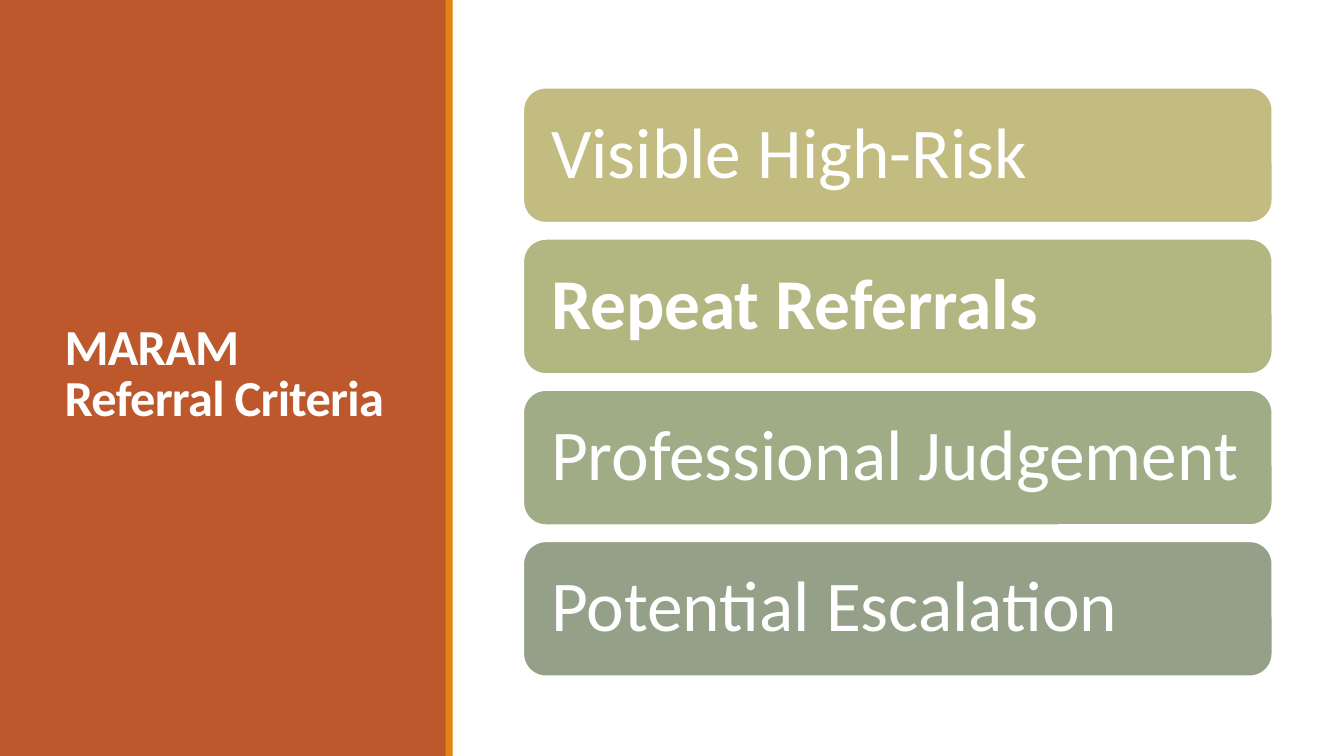
from pptx import Presentation
from pptx.dml.color import RGBColor
from pptx.enum.shapes import MSO_SHAPE
from pptx.enum.text import MSO_ANCHOR, MSO_AUTO_SIZE, PP_ALIGN
from pptx.util import Inches, Pt

FONT = "Calibri"
WHITE = "FFFFFF"
CRITERIA = [
    ("Visible High-Risk", "C2BC80", False),
    ("Repeat Referrals", "B2B782", True),
    ("Professional Judgement", "A0AC85", False),
    ("Potential Escalation", "94A088", False),
]
CARD_TOP, CARD_PITCH = 0.87, 1.5


def rgb(color):
    return RGBColor.from_string(color)


def add_box(s, kind, box, fill, line=None):
    sp = s.shapes.add_shape(kind, *map(Inches, box))
    sp.shadow.inherit = False
    sp.fill.solid()
    sp.fill.fore_color.rgb = rgb(fill)
    if line:
        sp.line.color.rgb = rgb(line)
        sp.line.width = Pt(1.25)
    else:
        sp.line.fill.background()
    return sp


def write_text(sp, text, size, spacing, margins, bold):
    tf = sp.text_frame
    left, top = map(Inches, margins)
    frame_format = {
        "word_wrap": True, "auto_size": MSO_AUTO_SIZE.NONE,
        "vertical_anchor": MSO_ANCHOR.MIDDLE,
        "margin_left": left, "margin_right": left,
        "margin_top": top, "margin_bottom": top,
    }
    for name, value in frame_format.items():
        setattr(tf, name, value)
    p = tf.paragraphs[0]
    p.alignment = PP_ALIGN.LEFT
    p.line_spacing = spacing
    r = p.add_run()
    r.text = text
    for name, value in {"name": FONT, "size": Pt(size), "bold": bold}.items():
        setattr(r.font, name, value)
    r.font.color.rgb = rgb(WHITE)
    return r


def add_title(s, text, box):
    sp = s.shapes.title
    sp.left, sp.top, sp.width, sp.height = map(Inches, box)
    r = write_text(sp, text, 36, 0.85, (0.1, 0.05), True)
    # Tighten the letters by half a point
    r.font._element.set("spc", "-50")
    # Bring the title in front of the side panel
    s.shapes._spTree.append(sp._element)


def add_card(s, top, text, fill, bold):
    sp = add_box(s, MSO_SHAPE.ROUNDED_RECTANGLE, (5.19, top, 7.43, 1.34), fill, WHITE)
    write_text(sp, text, 51, 0.9, (0.21, 0.21), bold)


def main():
    prs = Presentation()
    prs.slide_width, prs.slide_height = Inches(13.33), Inches(7.5)
    s = prs.slides.add_slide(prs.slide_layouts[5])

    # Side panel with title and accent stripe
    add_box(s, MSO_SHAPE.RECTANGLE, (0, 0, 4.43, 7.5), "BD582C")
    add_title(s, "MARAM Referral Criteria", (0.54, 0.57, 3.37, 6.31))
    add_box(s, MSO_SHAPE.RECTANGLE, (4.42, 0, 0.07, 7.5), "E48312")

    # Criteria cards
    for i, (text, fill, bold) in enumerate(CRITERIA):
        add_card(s, CARD_TOP + i * CARD_PITCH, text, fill, bold)

    prs.save("out.pptx")


if __name__ == "__main__":
    main()
